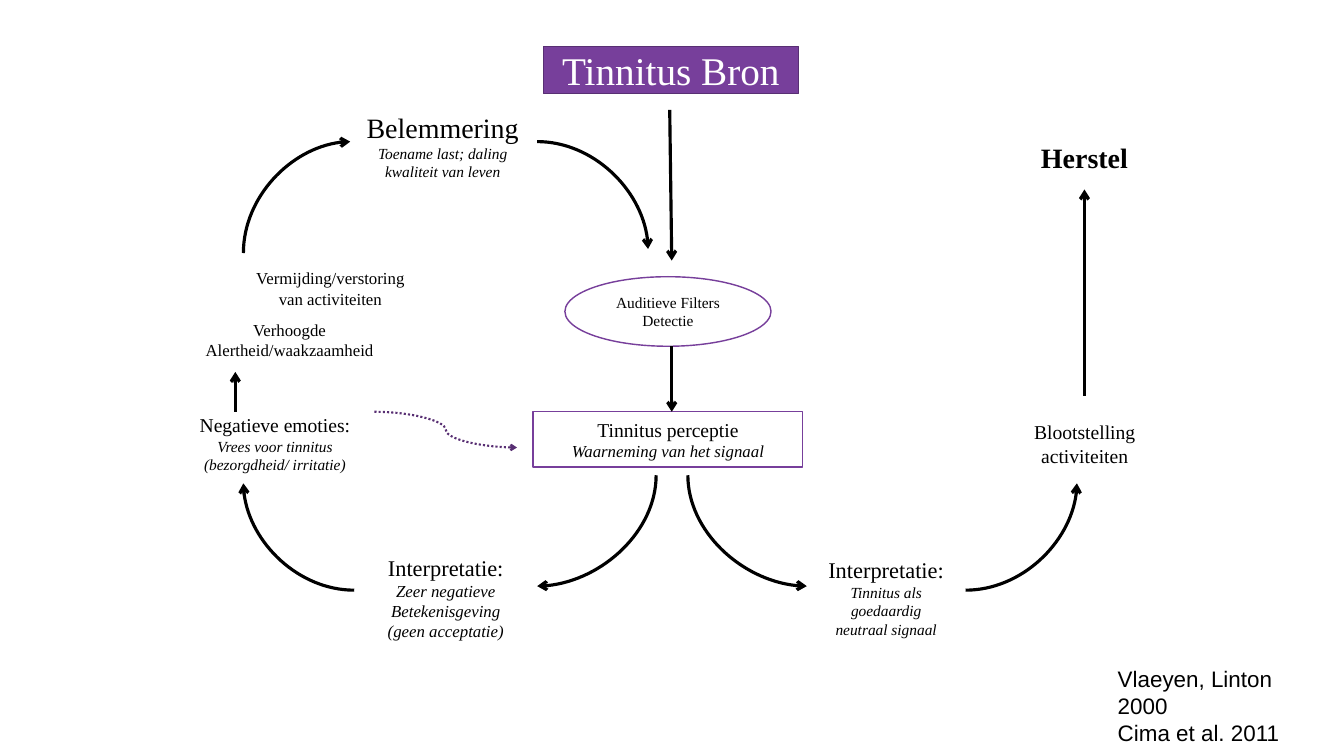
"""Build the slide with the tinnitus fear-avoidance and recovery model."""
from lxml.etree import SubElement
from pptx import Presentation
from pptx.dml.color import RGBColor
from pptx.enum.dml import MSO_LINE
from pptx.enum.shapes import MSO_CONNECTOR as Connector, MSO_SHAPE as Shape
from pptx.enum.text import MSO_ANCHOR, MSO_AUTO_SIZE, PP_ALIGN
from pptx.oxml.ns import qn
from pptx.util import Inches, Pt

PURPLE = RGBColor(0x77, 0x3F, 0x9B)
DARK_PURPLE = RGBColor(0x58, 0x2F, 0x73)
BLACK = RGBColor(0, 0, 0)
WHITE = RGBColor(255, 255, 255)
SERIF, SANS = "Times New Roman", "Arial"


def write_lines(shape, lines, color=BLACK, font_name=SERIF, align=PP_ALIGN.CENTER):
    frame = shape.text_frame
    frame.word_wrap = True
    frame.auto_size = MSO_AUTO_SIZE.NONE
    frame.vertical_anchor = MSO_ANCHOR.MIDDLE
    for index, (text, size, style) in enumerate(lines):
        paragraph = frame.paragraphs[0] if index == 0 else frame.add_paragraph()
        paragraph.alignment = align
        run = paragraph.add_run()
        run.text = text
        run.font.name = font_name
        run.font.size = Pt(size)
        run.font.bold = style == "bold"
        run.font.italic = style == "italic"
        run.font.color.rgb = color


def add_arrow(kind, start, end, color=BLACK, width=4.5):
    points = [Inches(value) for value in (*start, *end)]
    arrow = slide.shapes.add_connector(kind, *points)
    arrow.line.color.rgb = color
    arrow.line.width = Pt(width)
    SubElement(arrow.line._get_or_add_ln(), qn("a:tailEnd"), type="arrow")
    SubElement(arrow._element.spPr, qn("a:effectLst"))
    return arrow


presentation = Presentation()
presentation.slide_width = Inches(26.67)
presentation.slide_height = Inches(15)
slide = presentation.slides.add_slide(presentation.slide_layouts[5])

title = slide.shapes.title
title.left, title.top = Inches(10.78), Inches(0.92)
title.width, title.height = Inches(5.07), Inches(0.94)
title.fill.solid()
title.fill.fore_color.rgb = PURPLE
title.line.color.rgb = DARK_PURPLE
title.line.width = Pt(2)
write_lines(title, [("Tinnitus Bron", 56, "")], WHITE)

nodes = [
    (Shape.RECTANGLE, (10.58, 8.17, 5.35, 1.1),
     [("Tinnitus perceptie", 28, ""), ("Waarneming van het signaal", 24, "italic")]),
    (Shape.OVAL, (11.21, 5.49, 4.09, 1.38),
     [("Auditieve Filters", 22, ""), ("Detectie", 22, "")]),
]
for kind, box, lines in nodes:
    node = slide.shapes.add_shape(kind, *[Inches(value) for value in box])
    node.shadow.inherit = False
    node.fill.solid()
    node.fill.fore_color.rgb = WHITE
    node.line.color.rgb = PURPLE
    node.line.width = Pt(2)
    write_lines(node, lines)

labels = [
    ((7.19, 10.81, 3.31, 2.09),
     [("Interpretatie:", 32, ""), ("Zeer negatieve", 24, "italic"),
      ("Betekenisgeving", 24, "italic"), ("(geen acceptatie)", 24, "italic")]),
    ((4.51, 5.17, 4.09, 1.1),
     [("Vermijding/verstoring", 24, ""), ("van activiteiten", 24, "")]),
    ((7.07, 2.18, 3.43, 1.42),
     [("Belemmering", 40, ""), ("Toename last; daling kwaliteit van leven", 22, "italic")]),
    ((16.17, 10.65, 2.83, 2.4),
     [("Interpretatie:", 32, ""), ("Tinnitus als goedaardig", 22, "italic"),
      ("neutraal signaal", 22, "italic")]),
    ((20.11, 8.17, 2.83, 1.26),
     [("Blootstelling", 28, ""), ("activiteiten", 28, "")]),
    ((20.26, 2.66, 2.52, 0.94), [("Herstel", 40, "bold")]),
    ((3.57, 6.28, 4.35, 0.94), [("Verhoogde Alertheid/waakzaamheid", 24, "")]),
    ((3.41, 8.17, 4.09, 1.26),
     [("Negatieve emoties:", 28, ""), ("Vrees voor tinnitus", 22, "italic"),
      ("(bezorgdheid/ irritatie)", 22, "italic")]),
]
for box, lines in labels:
    label = slide.shapes.add_textbox(*[Inches(value) for value in box])
    write_lines(label, lines)

straight_arrows = [
    ((13.29, 2.18), (13.33, 5.17)),
    ((13.33, 6.87), (13.33, 8.17)),
    ((4.67, 8.17), (4.67, 7.38)),
    ((21.52, 7.85), (21.52, 3.76)),
]
for start, end in straight_arrows:
    add_arrow(Connector.STRAIGHT, start, end)

sideways_arcs = [
    ((7.03, 11.71), (4.83, 9.59)),
    ((19.16, 11.71), (21.37, 9.59)),
    ((10.66, 2.81), (12.86, 4.94)),
]
for start, end in sideways_arcs:
    arc = add_arrow(Connector.CURVE, start, end)
    arc._element.spPr.find(qn("a:prstGeom")).set("prst", "curvedConnector2")

upright_arcs = [
    ((13.02, 9.43), (10.66, 11.63)),
    ((13.65, 9.43), (16.01, 11.63)),
    ((4.83, 5.02), (6.95, 2.81)),
]
for (x1, y1), (x2, y2) in upright_arcs:
    turn = 1 if x2 < x1 else -1
    center_x, center_y = (x1 + x2) / 2, (y1 + y2) / 2
    half_x, half_y = turn * (y2 - y1) / 2, -turn * (x2 - x1) / 2
    arc = add_arrow(Connector.CURVE, (center_x - half_x, center_y - half_y),
                    (center_x + half_x, center_y + half_y))
    arc._element.spPr.find(qn("a:prstGeom")).set("prst", "curvedConnector2")
    arc._element.spPr.find(qn("a:xfrm")).set("rot", str(turn * 90 % 360 * 60000))

dotted = add_arrow(Connector.CURVE, (7.43, 8.17), (10.26, 8.88), DARK_PURPLE, 3)
dotted.line.dash_style = MSO_LINE.ROUND_DOT

sources = slide.shapes.add_textbox(Inches(22.15), Inches(13.43), Inches(4.12), Inches(1.13))
frame = sources.text_frame
frame.margin_left = frame.margin_right = frame.margin_top = frame.margin_bottom = Inches(0.03)
write_lines(sources, [("Vlaeyen, Linton 2000", 32, ""), ("Cima et al. 2011", 32, "")],
            font_name=SANS, align=PP_ALIGN.LEFT)

presentation.save("out.pptx")
